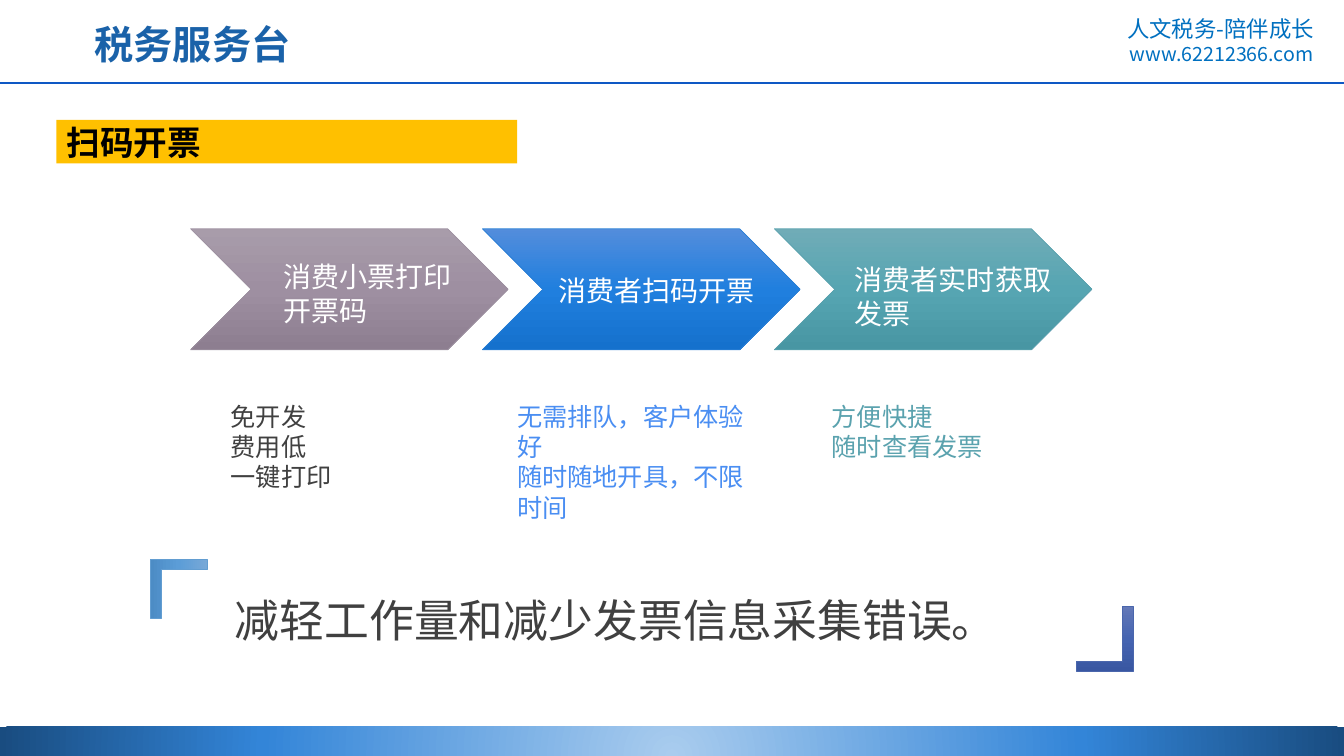
from lxml import etree
from pptx import Presentation
from pptx.dml.color import RGBColor
from pptx.enum.shapes import MSO_CONNECTOR, MSO_SHAPE
from pptx.enum.text import MSO_ANCHOR, MSO_AUTO_SIZE, PP_ALIGN
from pptx.oxml.ns import nsdecls, qn
from pptx.oxml import parse_xml
from pptx.util import Inches, Pt

LEFT, RIGHT, JUST = PP_ALIGN.LEFT, PP_ALIGN.RIGHT, PP_ALIGN.JUSTIFY
GROW, FIXED = MSO_AUTO_SIZE.SHAPE_TO_FIT_TEXT, MSO_AUTO_SIZE.NONE
MIDDLE = MSO_ANCHOR.MIDDLE
RECT, CHEVRON, CORNER = MSO_SHAPE.RECTANGLE, MSO_SHAPE.CHEVRON, MSO_SHAPE.CORNER
STRAIGHT = MSO_CONNECTOR.STRAIGHT
FONT = "Noto Sans CJK SC"
COLORS = {
    "white": "FFFFFF", "black": "000000", "dark": "404040",
    "sky": "0070C0", "rule": "0E58C4", "name": "1A62A9", "gold": "FFC000",
    "mauve": "9D90A0", "blue": "297FD5", "teal": "5AA2AE",
    "azure": "4A8EF2", "light": "629DD1", "navy": "4A66AC",
}
DOWN = '<a:lin ang="5400000" scaled="0"/>'
GLOW = ('<a:path path="circle"><a:fillToRect l="50000" t="130000" '
        'r="50000" b="-30000"/></a:path>')

deck = Presentation()
deck.slide_width, deck.slide_height = Inches(13.33), Inches(7.5)
slide = deck.slides.add_slide(deck.slide_layouts[5])
shapes = slide.shapes


def write(box, lines, sizes, color, align=LEFT, bold=False, latin=FONT):
    """Fill a box with lines; sizes holds one point size per line."""
    frame = box.text_frame
    frame.word_wrap = True
    frame.text = "\n".join(lines)
    for para, size in zip(frame.paragraphs, sizes):
        para.alignment = align
        font = para.runs[0].font
        font.size, font.bold, font.name = Pt(size), bold, latin
        font.color.rgb = RGBColor.from_string(COLORS[color])
        east = etree.SubElement(para.runs[0]._r.get_or_add_rPr(), qn("a:ea"))
        east.set("typeface", FONT)


def draw(kind, place, stops, line=None, shade=DOWN):
    """Add a shape with a gradient; stops are (percent, hex) pairs."""
    shape = shapes.add_shape(kind, *map(Inches, place))
    shape.shadow.inherit = False
    shape.fill.solid()
    marks = "".join(f'<a:gs pos="{pos * 1000}"><a:srgbClr val="{tone}"/></a:gs>'
                    for pos, tone in stops)
    grad = parse_xml(f'<a:gradFill {nsdecls("a")} rotWithShape="1">'
                     f'<a:gsLst>{marks}</a:gsLst>{shade}</a:gradFill>')
    props = shape._element.spPr
    props.replace(props.find(qn("a:solidFill")), grad)
    if line:
        shape.line.color.rgb = RGBColor.from_string(COLORS[line])
        shape.line.width = Pt(0.5)
    else:
        shape.line.fill.background()
    return shape


# Header and footer
motto = shapes.add_textbox(Inches(10.58), Inches(0.08), Inches(2.58), Inches(0.64))
write(motto, ["人文税务-陪伴成长", "www.62212366.com"], [16, 14], "sky", RIGHT)
frame = motto.text_frame
frame.margin_left = frame.margin_right = Inches(0.13)
frame.margin_top = frame.margin_bottom = Inches(0.07)
frame.auto_size = GROW

rule = shapes.add_connector(STRAIGHT, 0, Inches(0.82), deck.slide_width, Inches(0.82))
rule.line.color.rgb = RGBColor.from_string(COLORS["rule"])
rule.line.width = Pt(1.5)
etree.SubElement(rule._element.spPr, qn("a:effectLst"))

draw(RECT, (0, 7.21, 13.33, 0.29),
     [(0, "A9CCEE"), (61, "3385D8"), (100, "194C80")], shade=GLOW)

# Process arrows
tones = [
    ("mauve", ["A89CAA", "9E8FA1", "8D7E90"]),
    ("blue", ["538DDC", "207FDE", "1571CD"]),
    ("teal", ["70ACB7", "56A5B2", "4896A3"]),
]
for i, (line, grad) in enumerate(tones):
    draw(CHEVRON, (1.89 + i * 2.895, 2.27, 3.15, 1.2),
         list(zip((0, 50, 100), grad)), line)

# Corner brackets around the closing line
first = draw(CORNER, (1.48, 5.56, 0.59, 0.56),
             [(0, "77A8D7"), (50, "5C9DD7"), (100, "4C8CC5")], "light")
first.rotation = 90
last = draw(CORNER, (10.68, 6.02, 0.56, 0.64),
            [(0, "6378B7"), (50, "4564B1"), (100, "3957A2")], "navy")
last._element.spPr.find(qn("a:xfrm")).set("flipH", "1")
for mark in (first, last):
    mark.adjustments[0], mark.adjustments[1] = 0.18, 0.19

# Texts: place, lines, size, colour, alignment, bold
texts = [
    ((0.84, 0.15, 2.84, 0.57), ["税务服务台"], 28, "name", LEFT, True),
    ((2.71, 2.53, 1.91, 0.77), ["消费小票打印开票码"], 20, "white", LEFT, False),
    ((5.44, 2.66, 2.76, 0.44), ["消费者扫码开票"], 20, "white", LEFT, False),
    ((8.38, 2.56, 2.23, 0.77), ["消费者实时获取发票"], 20, "white", LEFT, False),
    ((2.19, 3.93, 2.44, 1.01), ["免开发", "费用低", "一键打印"],
     18, "dark", LEFT, False),
    ((5.03, 3.93, 2.61, 1.31), ["无需排队，客户体验好", "随时随地开具，不限时间"],
     18, "azure", LEFT, False),
    ((8.15, 3.93, 2.56, 0.71), ["方便快捷", "随时查看发票"], 18, "teal", LEFT, False),
    ((2.23, 5.83, 8.99, 0.64), ["减轻工作量和减少发票信息采集错误。"],
     32, "dark", JUST, False),
]
for place, lines, size, color, align, bold in texts:
    box = shapes.add_textbox(*map(Inches, place))
    write(box, lines, [size] * len(lines), color, align, bold)
    box.text_frame.auto_size = GROW

# Title band
title = shapes.title
title.left, title.top = Inches(0.56), Inches(1.19)
title.width, title.height = Inches(4.57), Inches(0.43)
title.fill.solid()
title.fill.fore_color.rgb = RGBColor.from_string(COLORS["gold"])
write(title, ["扫码开票"], [24], "black", JUST, True, "Arial")
title.text_frame.vertical_anchor = MIDDLE
title.text_frame.auto_size = FIXED

deck.save("out.pptx")
